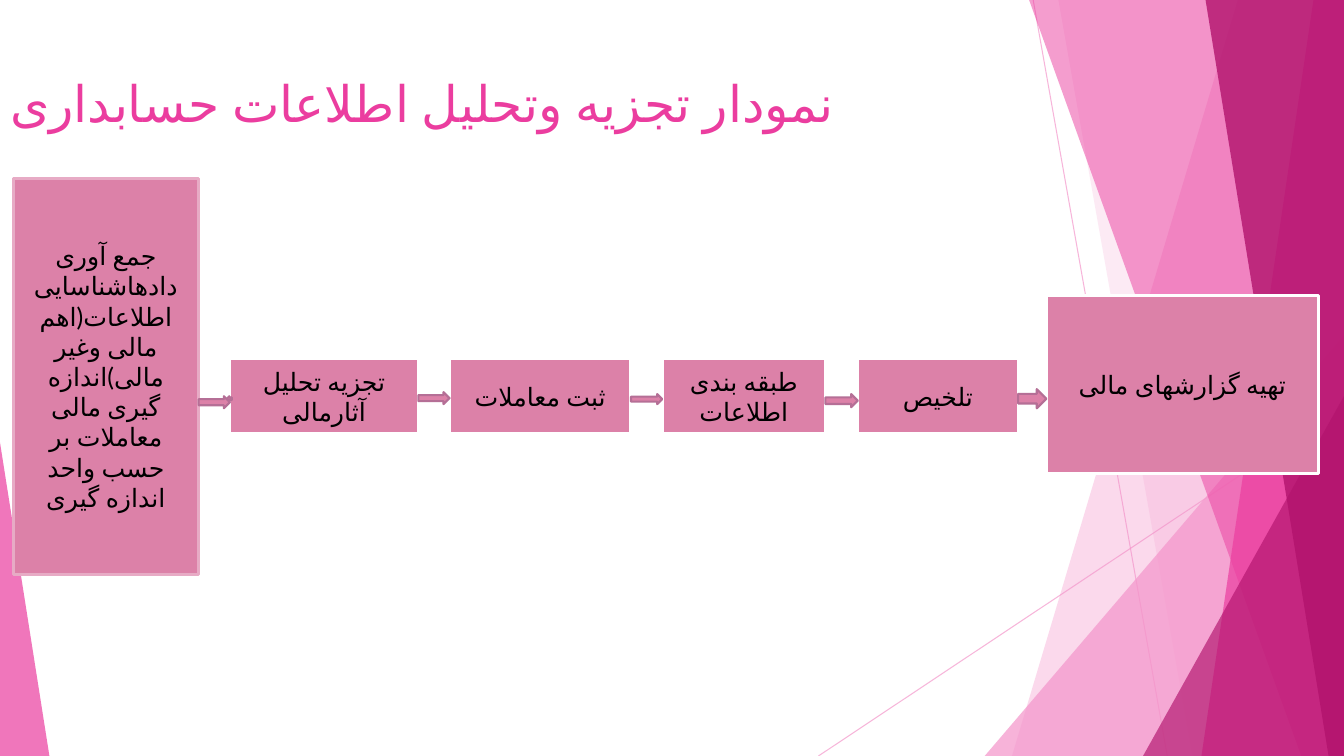
from lxml.etree import SubElement
from pptx import Presentation
from pptx.dml.color import RGBColor
from pptx.enum.lang import MSO_LANGUAGE_ID as LANG
from pptx.enum.shapes import MSO_CONNECTOR, MSO_SHAPE as SHAPE
from pptx.enum.text import MSO_ANCHOR as ANCHOR, PP_ALIGN as ALIGN
from pptx.oxml.ns import qn
from pptx.util import Pt

W, H = 960, 540
FONT = "Lato"
COLORS = {
    "pale": "F496CB", "pink": "EB3D9F", "deep": "B2136D",
    "box": "DC81A8", "arrow": "B56F96", "soft": "E7ABC5",
    "white": "FFFFFF", "text": "000000",
}

# Pale rays: start, end
RAYS = [((738, 0), (833.8, H)), ((W, 290.2), (584.6, H))]
# Bands and corners from back to front; a band runs from top x to bottom x
# and fills everything to the slide's right edge.
FACETS = [
    ("band", (884.2, 722.9), "pale", 36),
    ("band", (756, 851.8), "pale", 20),
    ("corner", (703.4, 239.8, 256.6, 300.2, 1), "pale", 72),
    ("band", (735.1, 929.5), "pink", 50),
    ("band", (938.2, 858.2), "pink", 70),
    ("band", (861.1, 949), "deep", 80),
    ("corner", (816.5, 283, 143.5, 257, 1), "deep", 66),
    ("corner", (0, 316.1, 35.3, 223.9, 0), "pink", 70),
]
# Text, left, top, width, height, line colour
STEPS = [
    ("جمع آوری دادهاشناسایی اطلاعات(اهم مالی وغیر مالی)اندازه گیری مالی "
     "معاملات بر حسب واحد اندازه گیری", 9.4, 127.4, 132.5, 283, "soft"),
    ("تجزیه تحلیل آثارمالی", 164.2, 256.3, 134.6, 53.3, "white"),
    ("ثبت معاملات", 321.1, 256.3, 129.6, 53.3, "white"),
    ("طبقه بندی اطلاعات", 473, 256.3, 116.6, 53.3, "white"),
    ("تلخیص", 612.7, 256.3, 114.5, 53.3, "white"),
    ("تهیه گزارشهای مالی", 747.4, 211, 194.4, 127.4, "white"),
]
# Middle and thickness of the arrow after each step
ARROWS = [(287.3, 8.6), (284.4, 8.6), (285.1, 7.2), (286.2, 9.4), (284.8, 13.7)]


def rgb(name):
    return RGBColor.from_string(COLORS[name])


def set_alpha(fill, percent):
    """Make a solid fill of a shape or line partly opaque."""
    color = fill._xPr.find(qn("a:solidFill"))[0]
    SubElement(color, qn("a:alpha"), val=str(percent * 1000))


def paint(sp, fill, line=None, width=0):
    sp.shadow.inherit = False
    sp.fill.solid()
    sp.fill.fore_color.rgb = rgb(fill)
    if line:
        sp.line.color.rgb = rgb(line)
        sp.line.width = Pt(width)
    else:
        sp.line.fill.background()


def write(tf, text, size, color, align):
    """Add one Persian run, with the font set for complex script too."""
    p = tf.paragraphs[0]
    p.alignment = align
    r = p.add_run()
    r.text = text
    r.font.language_id = LANG.FARSI
    r.font.size = Pt(size)
    r.font.color.rgb = rgb(color)
    r.font.name = FONT
    SubElement(r.font._element, qn("a:cs"), typeface=FONT)


def add_ray(shapes, start, end):
    ray = shapes.add_connector(MSO_CONNECTOR.STRAIGHT, *map(Pt, start + end))
    ray.line.color.rgb = rgb("pale")
    ray.line.width = Pt(0.75)
    set_alpha(ray.line.fill, 70)
    SubElement(ray._element.spPr, qn("a:effectLst"))


def add_band(shapes, top_x, bottom_x):
    outline = shapes.build_freeform(Pt(top_x), Pt(0))
    corners = [(W, 0), (W, H), (bottom_x, H)]
    outline.add_line_segments([(Pt(x), Pt(y)) for x, y in corners])
    return outline.convert_to_shape()


def add_corner(shapes, x, y, w, h, apex):
    sp = shapes.add_shape(SHAPE.ISOSCELES_TRIANGLE, *map(Pt, (x, y, w, h)))
    sp.adjustments[0] = apex
    return sp


def add_backdrop(shapes):
    for start, end in RAYS:
        add_ray(shapes, start, end)
    makers = {"band": add_band, "corner": add_corner}
    for kind, geometry, color, alpha in FACETS:
        sp = makers[kind](shapes, *geometry)
        paint(sp, color)
        set_alpha(sp.fill, alpha)


def add_title(title, x, y, w, h):
    title.left, title.top, title.width, title.height = map(Pt, (x, y, w, h))
    tf = title.text_frame
    tf.vertical_anchor = ANCHOR.TOP
    write(tf, "نمودار تجزیه وتحلیل اطلاعات حسابداری", 36, "pink", ALIGN.LEFT)


def add_step(shapes, text, x, y, w, h, line):
    sp = shapes.add_shape(SHAPE.RECTANGLE, *map(Pt, (x, y, w, h)))
    paint(sp, "box", line, 2)
    sp.text_frame.vertical_anchor = ANCHOR.MIDDLE
    write(sp.text_frame, text, 18, "text", ALIGN.CENTER)


def add_arrow(shapes, x, middle, w, h):
    sp = shapes.add_shape(SHAPE.RIGHT_ARROW, *map(Pt, (x, middle - h / 2, w, h)))
    paint(sp, "box", "arrow", 1.5)
    return sp


def add_process(shapes):
    """Draw the steps, with an arrow across each gap between them."""
    for step in STEPS:
        add_step(shapes, *step)
    back_arrow = add_arrow(shapes, 162, 284.8, 3.6, 3.6)
    back_arrow.rotation = 180
    for before, after, (middle, h) in zip(STEPS, STEPS[1:], ARROWS):
        right = before[1] + before[3]
        add_arrow(shapes, right, middle, after[1] - right, h)


def main():
    prs = Presentation()
    prs.slide_width, prs.slide_height = Pt(W), Pt(H)
    slide = prs.slides.add_slide(prs.slide_layouts[5])
    add_backdrop(slide.shapes)
    add_title(slide.shapes.title, 0, 48.2, 676.8, 103.7)
    add_process(slide.shapes)
    prs.save("out.pptx")


if __name__ == "__main__":
    main()
